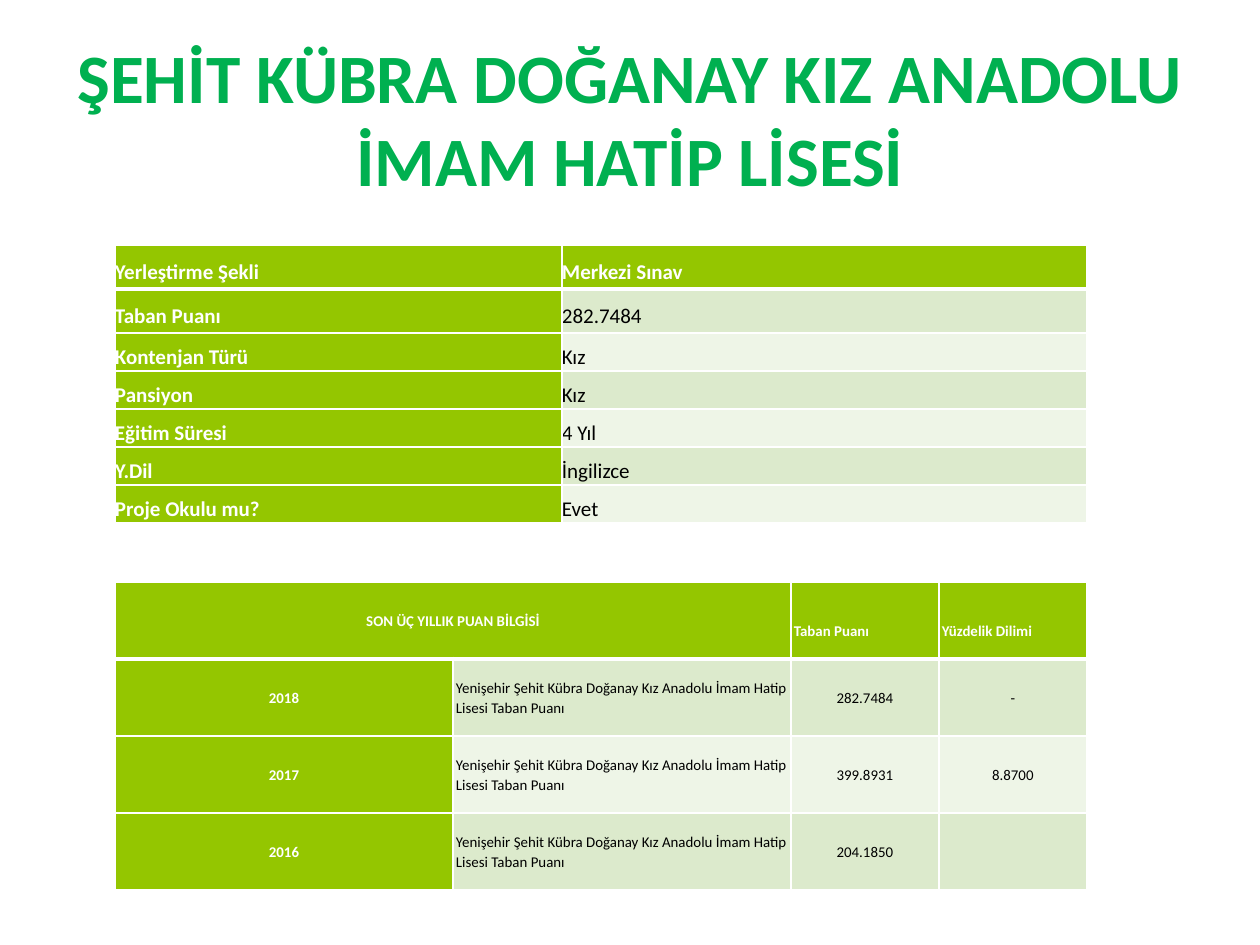
from lxml.etree import SubElement
from pptx import Presentation
from pptx.dml.color import RGBColor
from pptx.enum.text import MSO_ANCHOR as Anchor, MSO_AUTO_SIZE as AutoSize, PP_ALIGN as Align
from pptx.oxml.ns import qn
from pptx.util import Emu, Pt

PX = 914400 / 126
FONT = "Calibri"
WHITE = RGBColor(0xFF, 0xFF, 0xFF)
BLACK = RGBColor(0x00, 0x00, 0x00)
TITLE_GREEN = RGBColor(0x00, 0xB0, 0x50)
HEAD_GREEN = RGBColor(0x94, 0xC6, 0x00)
BANDS = (RGBColor(0xEE, 0xF5, 0xE7), RGBColor(0xDC, 0xEA, 0xCC))

TITLE = "ŞEHİT KÜBRA DOĞANAY KIZ ANADOLU İMAM HATİP LİSESİ"
SCORE_LABEL = "Yenişehir Şehit Kübra Doğanay Kız Anadolu İmam Hatip Lisesi Taban Puanı"
SCHOOL_ROWS = [
    ("Yerleştirme Şekli", "Merkezi Sınav"),
    ("Taban Puanı", "282.7484"),
    ("Kontenjan Türü", "Kız"),
    ("Pansiyon", "Kız"),
    ("Eğitim Süresi", "4 Yıl"),
    ("Y.Dil", "İngilizce"),
    ("Proje Okulu mu?", "Evet"),
]
SCORE_ROWS = [
    ("SON ÜÇ YILLIK PUAN BİLGİSİ", "", "Taban Puanı", "Yüzdelik Dilimi"),
    ("2018", SCORE_LABEL, "282.7484", "-"),
    ("2017", SCORE_LABEL, "399.8931", "8.8700"),
    ("2016", SCORE_LABEL, "204.1850", ""),
]


def px(length):
    """Turn a length in px into EMU."""
    return Emu(round(length * PX))


def style_text(para, size, color, bold):
    """Set the font of a whole paragraph."""
    font = para.font
    font.name, font.size, font.bold = FONT, Pt(size), bold
    font.color.rgb = color


def add_borders(cell, top, bottom):
    """Draw white cell borders, with the given top and bottom widths in points."""
    properties = cell._tc.get_or_add_tcPr()
    for side, width in (("L", 1), ("R", 1), ("T", top), ("B", bottom)):
        line = SubElement(properties, qn(f"a:ln{side}"), w=str(Pt(width)))
        fill = SubElement(line, qn("a:solidFill"))
        SubElement(fill, qn("a:srgbClr"), val=str(WHITE))


def set_margins(cell, side, top, bottom):
    """Set the cell margins in px."""
    cell.margin_left = cell.margin_right = px(side)
    cell.margin_top, cell.margin_bottom = px(top), px(bottom)


def add_grid(page, box, rows, widths, heights, size, spacing, anchor):
    """Add a banded table with a green header row and first column."""
    frame = page.shapes.add_table(len(rows), len(widths), *map(px, box))
    table = frame.table
    table.first_col = True
    for column, width in zip(table.columns, widths):
        column.width = px(width)
    for r, (texts, height) in enumerate(zip(rows, heights)):
        table.rows[r].height = px(height)
        for c, text in enumerate(texts):
            cell = table.cell(r, c)
            heading = r == 0 or c == 0
            add_borders(cell, 3 if r == 1 else 1, 3 if r == 0 else 1)
            cell.fill.solid()
            cell.fill.fore_color.rgb = HEAD_GREEN if heading else BANDS[r % 2]
            cell.vertical_anchor = anchor
            cell.text = text
            para = cell.text_frame.paragraphs[0]
            para.line_spacing = spacing
            style_text(para, size, WHITE if heading else BLACK, heading)
    return table


def add_title(page, box):
    """Place and format the title placeholder."""
    title = page.shapes.title
    title.left, title.top, title.width, title.height = map(px, box)
    frame = title.text_frame
    frame.text = TITLE
    frame.word_wrap = True
    frame.auto_size = AutoSize.NONE
    frame.vertical_anchor = Anchor.MIDDLE
    para = frame.paragraphs[0]
    para.alignment = Align.CENTER
    style_text(para, 39.6, TITLE_GREEN, True)


def add_school_table(page, box):
    """Add the table of school facts."""
    width = box[2]
    heights = [44] * 2 + [38] * 5
    table = add_grid(page, box, SCHOOL_ROWS, (447, width - 447), heights, 12, 1.07, Anchor.BOTTOM)
    for r, row in enumerate(table.rows):
        margin = 4 if r < 2 else 1
        for cell in row.cells:
            set_margins(cell, 0, margin, margin)


def add_score_table(page, box):
    """Add the table of scores for the last three years."""
    width, height = box[2:]
    widths = [width // 2 - 148] * 2 + [148] * 2
    heights = [height // len(SCORE_ROWS)] * len(SCORE_ROWS)
    table = add_grid(page, box, SCORE_ROWS, widths, heights, 8.5, Pt(11.2), Anchor.MIDDLE)
    for r, row in enumerate(table.rows):
        for c, cell in enumerate(row.cells):
            lowered = r == 0 and c > 1
            set_margins(cell, 3, 30 if lowered else 10, 10)
            if c != 1 and not lowered:
                cell.text_frame.paragraphs[0].alignment = Align.CENTER
    table.cell(0, 0).merge(table.cell(0, 1))


def main():
    """Build the slide and save it."""
    deck = Presentation()
    deck.slide_width, deck.slide_height = px(1260), px(945)
    page = deck.slides.add_slide(deck.slide_layouts[5])
    add_title(page, (63, 38, 1134, 158))
    add_school_table(page, (115, 245, 972, 278))
    add_score_table(page, (115, 582, 972, 308))
    deck.save("out.pptx")


if __name__ == "__main__":
    main()
